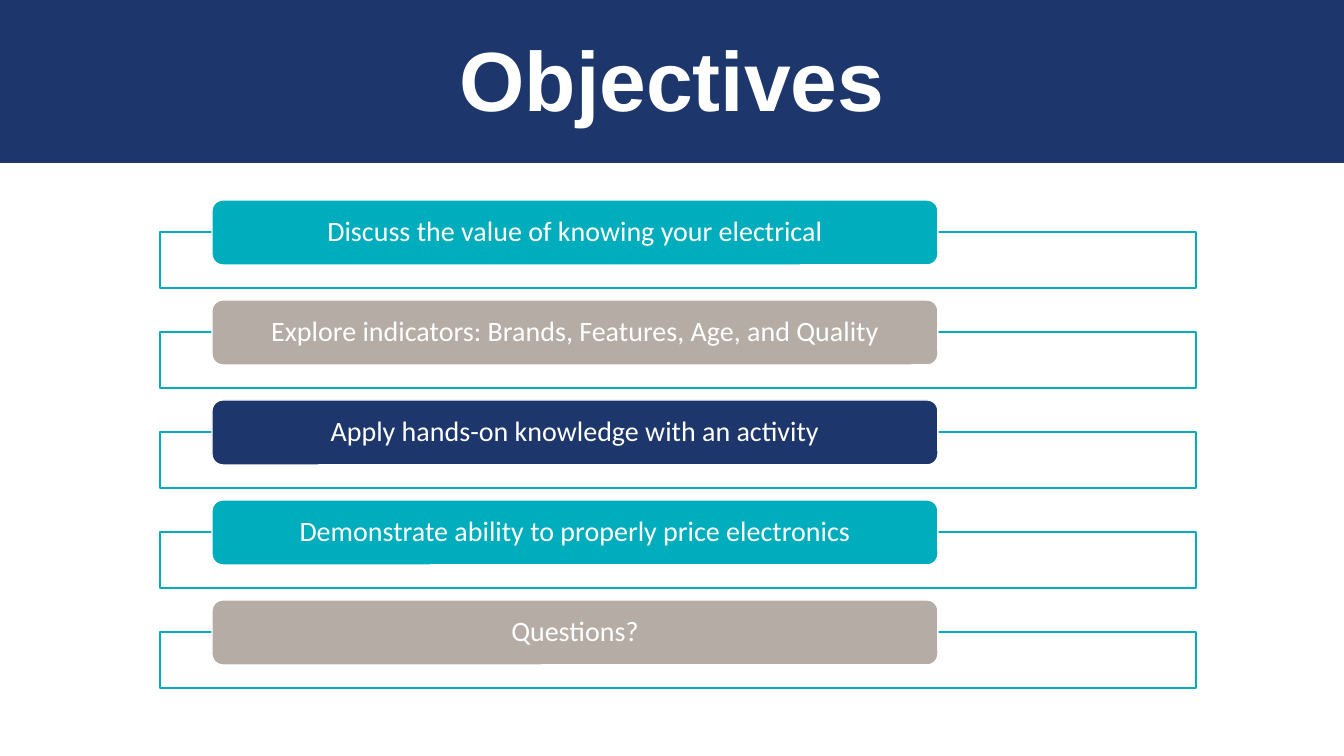
import pptx
import pptx.util
import pptx.dml.color
import pptx.enum.shapes
import pptx.enum.text

PX = 9144000 / 1008
COLORS = {"navy": "1D376C", "teal": "00ADBC", "taupe": "B5ADA5", "white": "FFFFFF"}
SHAPES = pptx.enum.shapes.MSO_SHAPE
OBJECTIVES = [
    ("Discuss the value of knowing your electrical", "teal"),
    ("Explore indicators: Brands, Features, Age, and Quality", "taupe"),
    ("Apply hands-on knowledge with an activity", "navy"),
    ("Demonstrate ability to properly price electronics", "teal"),
    ("Questions?", "taupe"),
]
FIRST_TOP = 200
ROW_STEP = 100

deck = pptx.Presentation()
deck.slide_width = round(1344 * PX)
deck.slide_height = round(756 * PX)
page = deck.slides.add_slide(deck.slide_layouts[6])


def add_panel(kind, area, fill, line=None):
    panel = page.shapes.add_shape(kind, *[round(value * PX) for value in area])
    panel.shadow.inherit = False
    panel.fill.solid()
    panel.fill.fore_color.rgb = pptx.dml.color.RGBColor.from_string(COLORS[fill])
    if line:
        panel.line.color.rgb = pptx.dml.color.RGBColor.from_string(COLORS[line])
        panel.line.width = pptx.util.Pt(1)
    else:
        panel.line.fill.background()
    return panel


def write(box, text, font, size, bold=False):
    """Put one centred white paragraph into the box and return it."""
    box.text_frame.word_wrap = True
    para = box.text_frame.paragraphs[0]
    para.text = text
    para.alignment = pptx.enum.text.PP_ALIGN.CENTER
    para.font.name = font
    para.font.size = pptx.util.Pt(size)
    para.font.bold = bold
    para.font.color.rgb = pptx.dml.color.RGBColor.from_string(COLORS["white"])
    return para


# Title banner
add_panel(SHAPES.RECTANGLE, (0, 0, 1344, 163), "navy")
title = page.shapes.add_textbox(*[round(value * PX) for value in (0, 32, 1344, 104)])
heading = write(title, "Objectives", "Arial", 60, bold=True)
heading.line_spacing = pptx.util.Pt(65)

# Objectives: an outlined frame with a coloured label over its top edge
for row, (objective, color) in enumerate(OBJECTIVES):
    top = FIRST_TOP + row * ROW_STEP
    add_panel(SHAPES.RECTANGLE, (160, top + 32, 1036, 56), "white", "teal")
    label = add_panel(SHAPES.ROUNDED_RECTANGLE, (212, top, 726, 65), color, "white")
    frame = label.text_frame
    frame.margin_left = frame.margin_right = round(27 * PX)
    frame.margin_top = frame.margin_bottom = 0
    frame.vertical_anchor = pptx.enum.text.MSO_ANCHOR.MIDDLE
    write(label, objective, "Calibri", 20).line_spacing = 0.9

deck.save("out.pptx")
